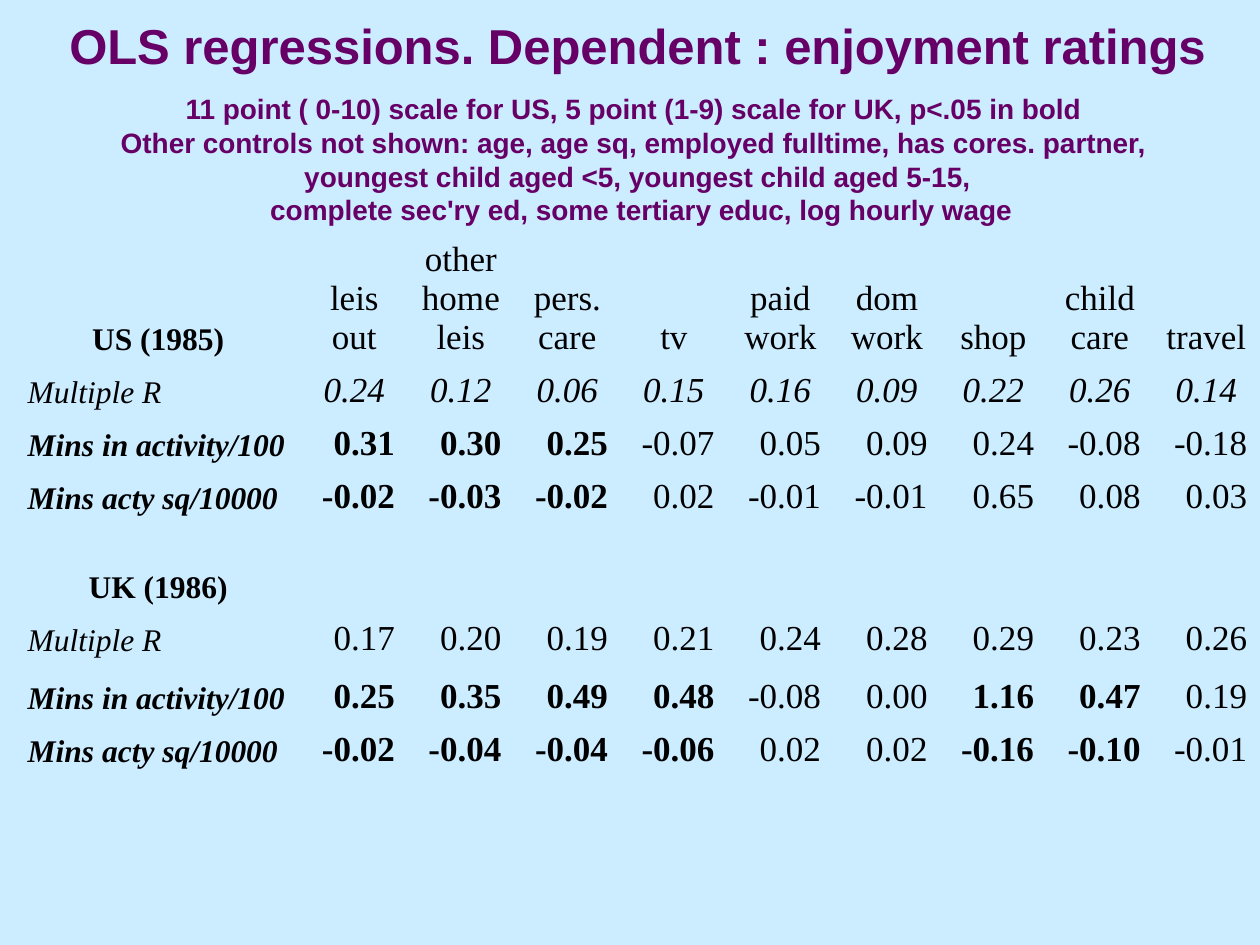
"""Build a slide with a table of OLS regressions of enjoyment ratings."""
from pptx import Presentation
from pptx import util as u
from pptx.dml.color import RGBColor
from pptx.enum import text

SKY = RGBColor(0xCC, 0xEC, 0xFF)
PURPLE = RGBColor(0x66, 0x00, 0x66)
BLACK = RGBColor(0, 0, 0)
NO_GRID = "{2D5ABB26-0587-4C30-8999-92F81FD0307C}"
CENTER, LEFT, RIGHT = text.PP_ALIGN.CENTER, text.PP_ALIGN.LEFT, text.PP_ALIGN.RIGHT

TITLE = "OLS regressions. Dependent : enjoyment ratings"
NOTES = "\v".join([
    "11 point ( 0-10) scale for US, 5 point (1-9) scale for UK, p<.05 in bold ",
    "Other controls not shown: age, age sq, employed fulltime, has cores. partner, ",
    "youngest child aged <5, youngest child aged 5-15,",
    " complete sec'ry ed, some tertiary educ, log hourly wage",
])
HEADS = ["leis out", "other home leis", "pers. care", "tv", "paid work",
         "dom work", "shop", "child care", "travel"]
R, MINS, SQ = "Multiple R", "Mins in activity/100", "Mins acty sq/10000"
ROWS = [
    (1.0, "US (1985)", HEADS),
    (0.42, R, "0.24 0.12 0.06 0.15 0.16 0.09 0.22 0.26 0.14".split()),
    (0.42, MINS, "*0.31 *0.30 *0.25 -0.07 0.05 0.09 0.24 -0.08 -0.18".split()),
    (0.42, SQ, "*-0.02 *-0.03 *-0.02 0.02 -0.01 -0.01 0.65 0.08 0.03".split()),
    (0.71, "UK (1986)", [""] * len(HEADS)),
    (0.42, R, "0.17 0.20 0.19 0.21 0.24 0.28 0.29 0.23 0.26".split()),
    (0.46, MINS, "*0.25 *0.35 *0.49 *0.48 -0.08 0.00 *1.16 *0.47 0.19".split()),
    (0.42, SQ, "*-0.02 *-0.04 *-0.04 *-0.06 0.02 0.02 *-0.16 *-0.10 -0.01".split()),
]


def style(p, size, name, color, bold, italic=False, align=CENTER):
    p.alignment = align
    for f in [p.font] + [r.font for r in p.runs]:
        f.size, f.name, f.bold, f.italic = u.Pt(size), name, bold, italic
        f.color.rgb = color


prs = Presentation()
prs.slide_width, prs.slide_height = u.Inches(10), u.Inches(7.5)
s = prs.slides.add_slide(prs.slide_layouts[5])
s.background.fill.solid()
s.background.fill.fore_color.rgb = SKY

left, width = u.Inches(0.12), u.Inches(9.88)
sp = s.shapes.title
sp.left, sp.top, sp.width, sp.height = left, u.Inches(0.21), width, u.Inches(1.5)
tf = sp.text_frame
tf.word_wrap = True
tf.auto_size = text.MSO_AUTO_SIZE.NONE
tf.vertical_anchor = text.MSO_ANCHOR.MIDDLE
p = tf.paragraphs[0]
p.text = TITLE
p.space_after = u.Pt(10)
style(p, 28, "Arial", PURPLE, True)
p = tf.add_paragraph()
p.text = NOTES
p.line_spacing = u.Pt(19.2)
style(p, 16, "Arial", PURPLE, True)

height = u.Inches(sum(row[0] for row in ROWS))
frame = s.shapes.add_table(len(ROWS), len(HEADS) + 1, left, u.Inches(1.86), width, height)
table = frame.table
table.first_row = table.horz_banding = False
table._tbl.tblPr[0].text = NO_GRID
label_width = u.Inches(2.27)
table.columns[0].width = label_width
for c in range(1, len(HEADS) + 1):
    table.columns[c].width = (width - label_width) // len(HEADS)

for i, (row_height, label, values) in enumerate(ROWS):
    table.rows[i].height = u.Inches(row_height)
    section = label.startswith(("US", "UK"))
    for j, value in enumerate([label] + values):
        cell = table.cell(i, j)
        cell.fill.background()
        cell.vertical_anchor = text.MSO_ANCHOR.BOTTOM
        p = cell.text_frame.paragraphs[0]
        p.text = value.lstrip("*")
        if j == 0:
            bold, italic = label != R, not section
            size, align = 18, CENTER if section else LEFT
        else:
            bold, italic = value.startswith("*"), i == 1
            size, align = 20, CENTER if i < 2 else RIGHT
        style(p, size, "Times New Roman", BLACK, bold, italic, align)

prs.save("out.pptx")
